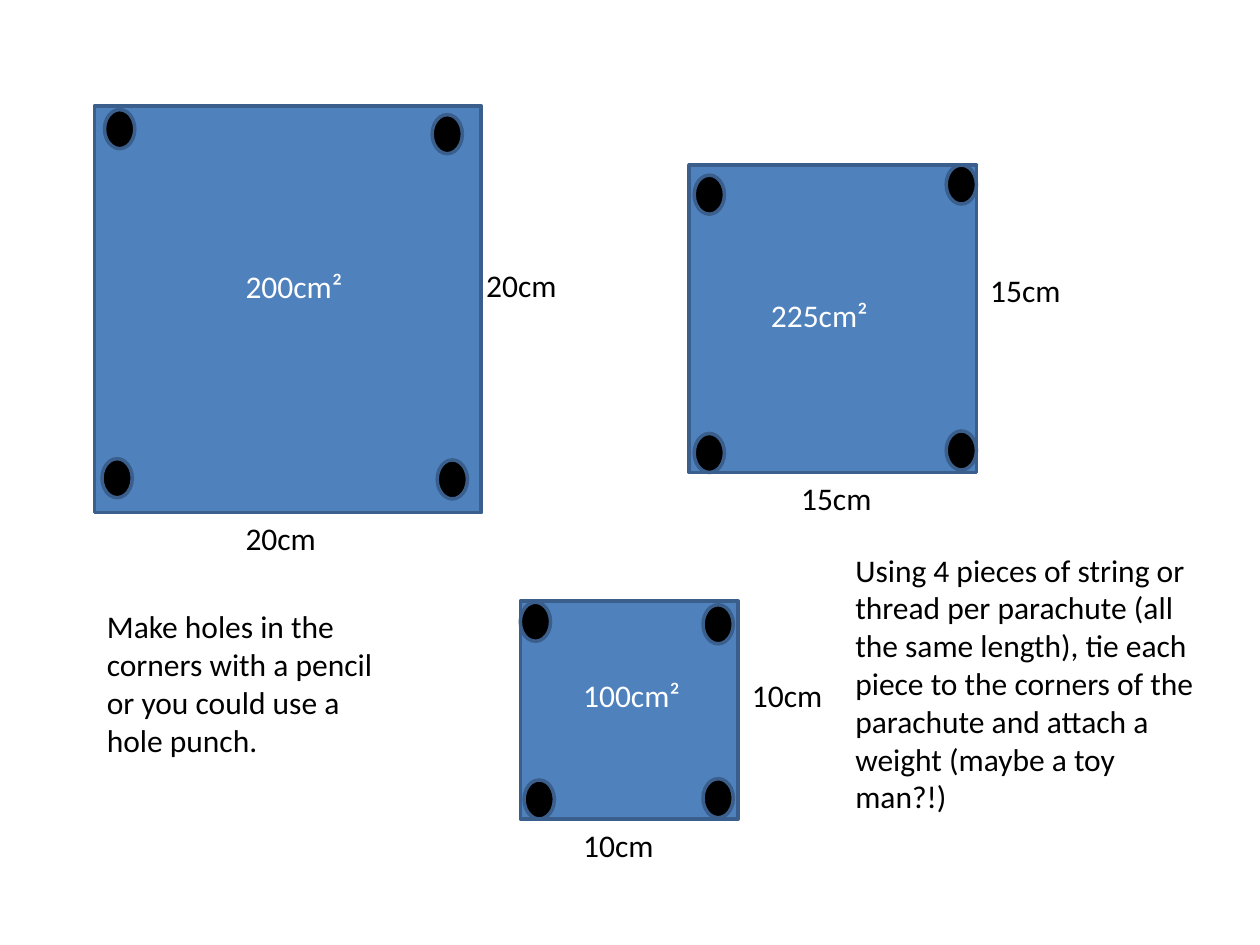
from pptx import Presentation
from pptx.dml.color import RGBColor
from pptx.enum.shapes import MSO_SHAPE
from pptx.util import Inches, Pt

RECTANGLE = MSO_SHAPE.RECTANGLE
OVAL = MSO_SHAPE.OVAL

BLUE, EDGE, BLACK, WHITE = "4F81BD", "3A5F8C", "000000", "FFFFFF"
HOLE_WIDTH, HOLE_HEIGHT = 0.24, 0.31
LABEL_HEIGHT = 0.4

# Each parachute: box, area label, bottom label, side label, hole positions.
# A label is (text, left, top, width); all positions are relative to the box.
PARACHUTES = [
    ((0.75, 0.84, 3.07, 3.23),
     ("200cm²", 1.1, 1.23, 1.22),
     ("20cm", 1.1, 3.23, 0.98),
     ("20cm", 3.01, 1.22, 0.79),
     [(0.08, 0.03), (2.68, 0.07), (0.06, 2.8), (2.72, 2.81)]),
    ((5.47, 1.31, 2.28, 2.44),
     ("225cm²", 0.55, 0.99, 1.34),
     ("15cm", 0.79, 2.44, 1.1),
     ("15cm", 2.29, 0.79, 1.02),
     [(0.04, 0.08), (2.04, 0), (0.04, 2.13), (2.04, 2.11)]),
    ((4.13, 4.77, 1.73, 1.73),
     ("100cm²", 0.4, 0.55, 1.1),
     ("10cm", 0.4, 1.74, 0.94),
     ("10cm", 1.74, 0.55, 0.94),
     [(0, 0.01), (1.45, 0.03), (0.03, 1.42), (1.45, 1.41)]),
]

INSTRUCTIONS = [
    ((6.69, 4.32, 3.03, 2.22),
     "Using 4 pieces of string or thread per parachute (all the same length), "
     "tie each piece to the corners of the parachute and attach a weight "
     "(maybe a toy man?!)"),
    ((0.75, 4.77, 2.44, 1.31),
     "Make holes in the corners with a pencil or you could use a hole punch."),
]


def color(value):
    return RGBColor.from_string(value)


def add_outlined_shape(slide, kind, box, fill):
    shape = slide.shapes.add_shape(kind, *map(Inches, box))
    shape.shadow.inherit = False
    shape.fill.solid()
    shape.fill.fore_color.rgb = color(fill)
    shape.line.color.rgb = color(EDGE)
    shape.line.width = Pt(2)


def add_text(slide, box, text, text_color=BLACK):
    text_frame = slide.shapes.add_textbox(*map(Inches, box)).text_frame
    text_frame.word_wrap = True
    paragraph = text_frame.paragraphs[0]
    paragraph.text = text
    paragraph.font.name = "Calibri"
    paragraph.font.size = Pt(18)
    paragraph.font.color.rgb = color(text_color)


def add_parachute(slide, box, area, bottom, side, holes):
    left, top = box[:2]
    add_outlined_shape(slide, RECTANGLE, box, BLUE)

    # Area and side lengths
    for label, text_color in ((area, WHITE), (bottom, BLACK), (side, BLACK)):
        text, x, y, width = label
        add_text(slide, (left + x, top + y, width, LABEL_HEIGHT), text, text_color)

    # Corner holes
    for x, y in holes:
        add_outlined_shape(
            slide, OVAL, (left + x, top + y, HOLE_WIDTH, HOLE_HEIGHT), BLACK)


def main():
    presentation = Presentation()
    presentation.slide_width = Inches(10)
    presentation.slide_height = Inches(7.5)
    slide = presentation.slides.add_slide(presentation.slide_layouts[6])

    for parachute in PARACHUTES:
        add_parachute(slide, *parachute)
    for box, text in INSTRUCTIONS:
        add_text(slide, box, text)

    presentation.save("out.pptx")


if __name__ == "__main__":
    main()
